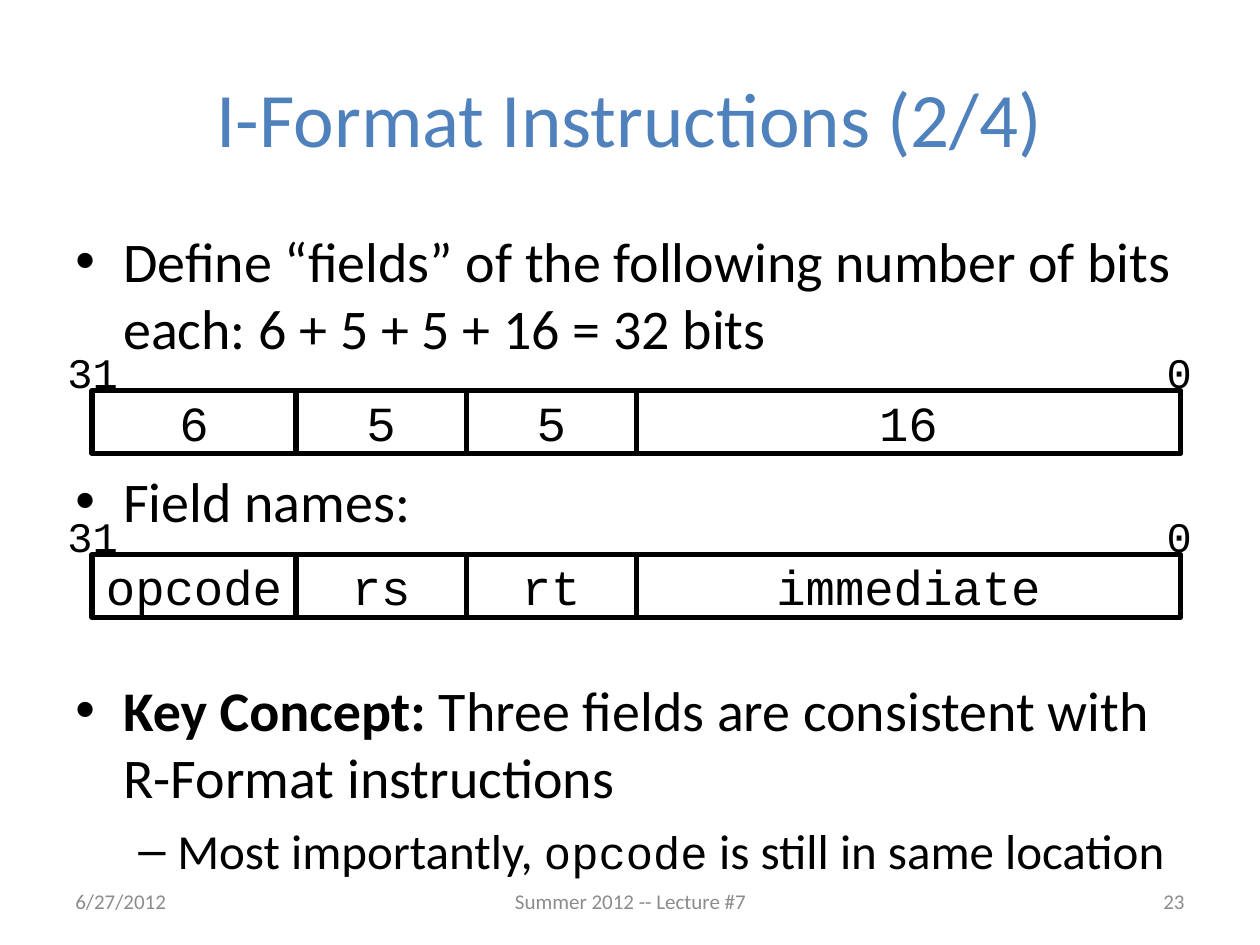
from typing import NamedTuple

from lxml.etree import SubElement
from pptx import Presentation
from pptx.dml.color import RGBColor
from pptx.enum.shapes import MSO_SHAPE as Shape
from pptx.enum.text import MSO_ANCHOR as Anchor, PP_ALIGN as Align
from pptx.oxml.ns import qn
from pptx.util import Inches, Pt

BLACK = RGBColor(0x00, 0x00, 0x00)
BLUE = RGBColor(0x4F, 0x81, 0xBD)
GRAY = RGBColor(0x8C, 0x8C, 0x8C)
SANS, MONO = "Calibri", "Courier New"
BIT_WIDTH = 0.27
ROW_LEFT, ROW_HEIGHT = 0.73, 0.5
FIELD_BITS = (6, 5, 5, 16)


class Label(NamedTuple):
    text: str
    left: float
    top: float
    width: float
    height: float
    size: float
    color: RGBColor = BLACK
    align: Align = Align.LEFT
    anchor: Anchor = Anchor.MIDDLE
    font: str = SANS
    wrap: bool = True


class Span(NamedTuple):
    text: str
    size: float = 32
    font: str = SANS
    bold: bool = False


class Bullet(NamedTuple):
    spans: tuple[Span, ...]
    space_before: float
    mark: str = "•"
    level: int = 0
    margin: float = 0.38
    hanging: float = 0.38


class Row(NamedTuple):
    top: float
    names: tuple[str, ...]


LABELS = (
    Label("I-Format Instructions (2/4)", 0.5, 0.3, 9, 1.25, 44, BLUE, Align.CENTER),
    Label("6/27/2012", 0.5, 6.95, 2.33, 0.4, 12, GRAY),
    Label("Summer 2012 -- Lecture #7", 3.42, 6.95, 3.17, 0.4, 12, GRAY, Align.CENTER),
    Label("23", 7.17, 6.95, 2.33, 0.4, 12, GRAY, Align.RIGHT),
)
BULLETS = (
    Bullet((Span("Define “fields” of the following number of bits each: "
                 "6 + 5 + 5 + 16 = 32 bits"),), 0),
    Bullet((Span("Field names:"),), 60),
    Bullet((Span("Key Concept:", bold=True),
            Span(" Three fields are consistent with R-Format instructions")), 81),
    Bullet((Span("Most importantly, ", 28), Span("opcode", 26, MONO),
            Span(" ", 28, bold=True), Span("is still in same location", 28)),
           6, "–", 1, 0.81, 0.31),
)
ROWS = (
    Row(3.1, tuple(str(bits) for bits in FIELD_BITS)),
    Row(4.4, ("opcode", "rs", "rt", "immediate")),
)


def style_span(span, size: float, font: str, color: RGBColor, bold: bool = False) -> None:
    span.font.size = Pt(size)
    span.font.name = font
    span.font.color.rgb = color
    span.font.bold = bold


def add_label(page, label: Label) -> None:
    box = page.shapes.add_textbox(Inches(label.left), Inches(label.top),
                                  Inches(label.width), Inches(label.height))
    frame = box.text_frame
    frame.text = label.text
    frame.word_wrap = label.wrap
    frame.vertical_anchor = label.anchor
    para = frame.paragraphs[0]
    para.alignment = label.align
    style_span(para.runs[0], label.size, label.font, label.color)


def add_bullets(page, bullets: tuple[Bullet, ...]) -> None:
    frame = page.shapes.add_textbox(Inches(0.5), Inches(1.75), Inches(9), Inches(5.4)).text_frame
    frame.word_wrap = True
    for index, bullet in enumerate(bullets):
        para = frame.add_paragraph() if index else frame.paragraphs[0]
        para.level = bullet.level
        para.space_before = Pt(bullet.space_before)
        properties = para._p.get_or_add_pPr()
        properties.set("marL", str(Inches(bullet.margin)))
        properties.set("indent", str(-Inches(bullet.hanging)))
        SubElement(properties, qn("a:buFont"), typeface="Arial")
        SubElement(properties, qn("a:buChar"), char=bullet.mark)
        for part in bullet.spans:
            span = para.add_run()
            span.text = part.text
            style_span(span, part.size, part.font, BLACK, part.bold)


def add_field(page, name: str, left: float, top: float, width: float) -> None:
    box = page.shapes.add_shape(Shape.RECTANGLE, Inches(left), Inches(top),
                                Inches(width), Inches(ROW_HEIGHT))
    box.shadow.inherit = False
    box.fill.background()
    box.line.color.rgb = BLACK
    box.line.width = Pt(3)
    frame = box.text_frame
    frame.text = name
    frame.vertical_anchor = Anchor.MIDDLE
    para = frame.paragraphs[0]
    para.alignment = Align.CENTER
    style_span(para.runs[0], 28, MONO, BLACK)


def add_row(page, row: Row) -> None:
    left = ROW_LEFT
    for name, bits in zip(row.names, FIELD_BITS):
        add_field(page, name, left, row.top, bits * BIT_WIDTH)
        left += bits * BIT_WIDTH
    for text, label_left, width in (("31", 0.43, 0.61), ("0", 9.16, 0.4)):
        add_label(page, Label(text, label_left, row.top - 0.4, width, 0.5, 24,
                              align=Align.CENTER, anchor=Anchor.TOP, font=MONO, wrap=False))


def main() -> None:
    """Build the slide on the fields of I-format instructions."""
    deck = Presentation()
    deck.slide_width, deck.slide_height = Inches(10), Inches(7.5)
    page = deck.slides.add_slide(deck.slide_layouts[6])
    for label in LABELS:
        add_label(page, label)
    add_bullets(page, BULLETS)
    for row in ROWS:
        add_row(page, row)
    deck.save("out.pptx")


if __name__ == "__main__":
    main()
